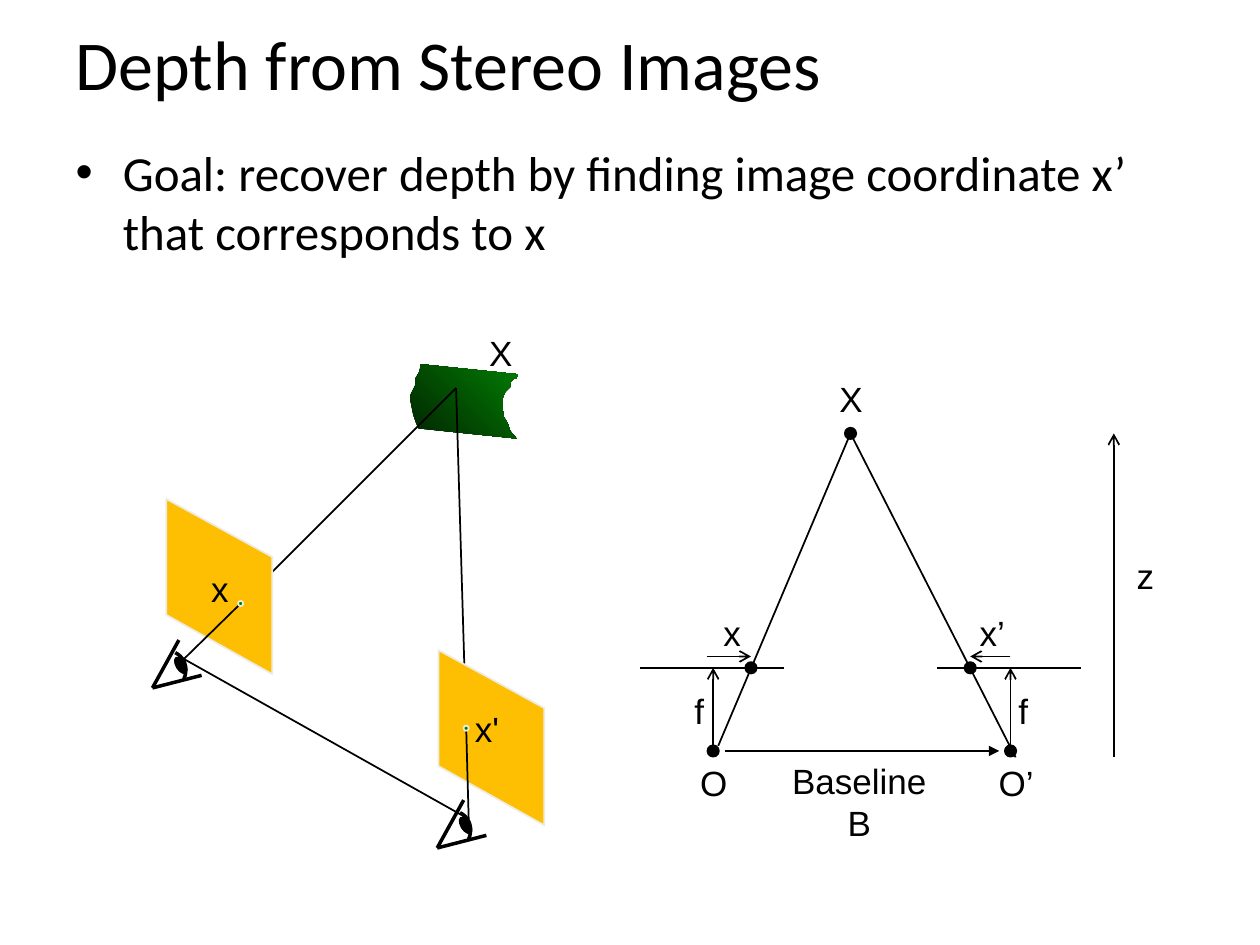
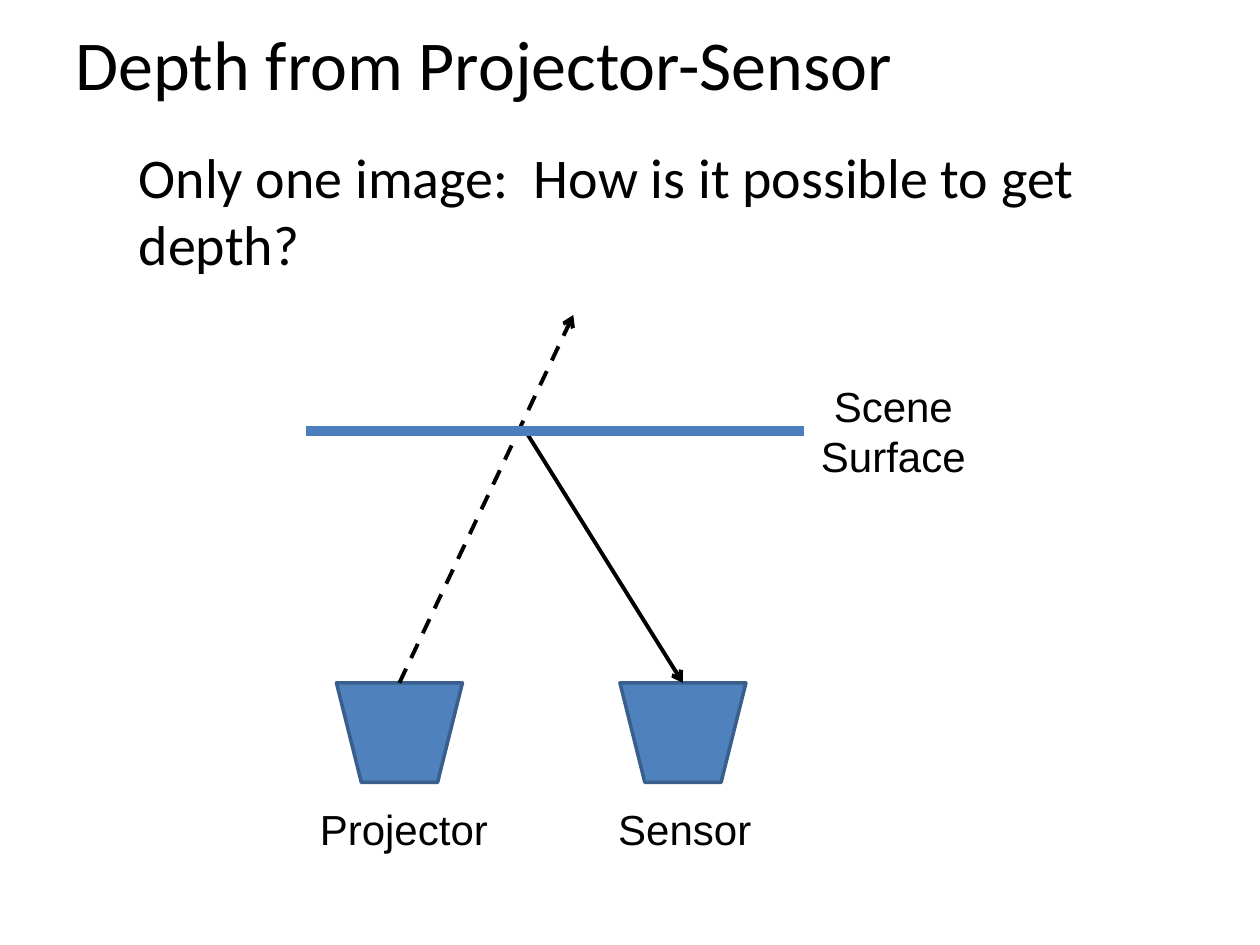
from lxml.etree import SubElement
from pptx import Presentation
from pptx.dml.color import RGBColor
from pptx.enum.dml import MSO_LINE
from pptx.enum.shapes import MSO_CONNECTOR, MSO_SHAPE
from pptx.enum.text import MSO_ANCHOR, MSO_AUTO_SIZE, PP_ALIGN
from pptx.oxml.ns import qn
from pptx.util import Inches, Pt

COLORS = {
    "ink": "000000",
    "image_plane": "FEBF02",
    "pale_edge": "EEECE1",
    "surface_dark": "012501",
    "surface_light": "037C03",
    "device": "4F81BD",
    "device_edge": "3A5F8C",
    "scene": "4B7EBC",
}
COLUMNS, ROWS = 10, 7.5
SURFACE_OUTLINE = [
    (3.34, 2.89), (3.33, 2.95), (3.3, 3), (3.3, 3.05), (3.26, 3.13), (3.26, 3.19),
    (3.28, 3.29), (3.3, 3.35), (3.32, 3.4), (4.1, 3.48), (4.05, 3.42), (4.03, 3.36),
    (4, 3.31), (3.99, 3.25), (3.99, 3.16), (4.01, 3.11), (4.05, 3.07), (4.05, 3.04),
    (4.07, 3.01), (4.1, 3), (4.11, 2.97),
]


def apply(target, values):
    """Set every attribute named in values on target."""
    for name, value in values.items():
        setattr(target, name, value)


def shifted(points, across, down):
    """Move a list of points by the same distance."""
    return [(x + across, y + down) for x, y in points]


def curve(controls, steps=10):
    """Sample a cubic curve given by four control points."""
    points = []
    for step in range(steps + 1):
        t = step / steps
        weights = [(1 - t) ** 3, 3 * t * (1 - t) ** 2, 3 * t * t * (1 - t), t ** 3]
        points.append(tuple(sum(w * c[axis] for w, c in zip(weights, controls)) for axis in (0, 1)))
    return points


class Sketch:
    """Draws styled elements on the current slide, measured in columns and rows."""

    def __init__(self, presentation):
        """Take the slide size and derive the grid cell."""
        self.presentation = presentation
        self.cell_width = presentation.slide_width / COLUMNS
        self.cell_height = presentation.slide_height / ROWS
        self.slide = None

    def point(self, column, row):
        """Convert a grid position to slide units."""
        return round(column * self.cell_width), round(row * self.cell_height)

    def place(self, left, top, width, height):
        """Convert a grid rectangle to slide units."""
        return (*self.point(left, top), *self.point(width, height))

    def color(self, name):
        """Look up a named colour."""
        return RGBColor.from_string(COLORS[name])

    def set_text(self, frame, text, size, font, align, bulleted=True):
        """Put one formatted paragraph in a text frame."""
        frame.text = text
        paragraph = frame.paragraphs[0]
        if not bulleted:
            properties = paragraph._p.get_or_add_pPr()
            properties.set("marL", "0")
            properties.set("indent", "0")
            SubElement(properties, qn("a:buNone"))
        apply(paragraph, {"alignment": align, "space_before": Pt(0)})
        apply(paragraph.font, {"size": Pt(size), "name": font})
        paragraph.font.color.rgb = self.color("ink")

    def new_slide(self, title, body, body_left, body_size, bulleted):
        """Start a slide with its title and body text."""
        self.slide = self.presentation.slides.add_slide(self.presentation.slide_layouts[1])
        title_shape, body_shape = self.slide.placeholders
        areas = ((title_shape, (0.5, 0, 9, 1)), (body_shape, (body_left, 1.08, 9.5 - body_left, 5.62)))
        for shape, area in areas:
            apply(shape, dict(zip(("left", "top", "width", "height"), self.place(*area))))
        self.set_text(title_shape.text_frame, title, 40, "Calibri", PP_ALIGN.LEFT)
        self.set_text(body_shape.text_frame, body, body_size, "Calibri", PP_ALIGN.LEFT, bulleted)

    def label(self, text, area, size=20, wrap=False, anchor=MSO_ANCHOR.MIDDLE):
        """Add a centred diagram label."""
        frame = self.slide.shapes.add_textbox(*self.place(*area)).text_frame
        self.set_text(frame, text, size, "Arial", PP_ALIGN.CENTER)
        apply(frame, {"word_wrap": wrap, "vertical_anchor": anchor,
                      "auto_size": MSO_AUTO_SIZE.SHAPE_TO_FIT_TEXT})

    def line(self, begin, end, width=1, arrow=None, color="ink", dash=None):
        """Add a straight line, with an arrowhead at its end if asked."""
        connector = self.slide.shapes.add_connector(
            MSO_CONNECTOR.STRAIGHT, *self.point(*begin), *self.point(*end))
        connector.line.color.rgb = self.color(color)
        apply(connector.line, {"width": Pt(width), "dash_style": dash})
        if arrow:
            SubElement(connector.line._get_or_add_ln(), qn("a:tailEnd"), type=arrow)
        SubElement(connector._element.spPr, qn("a:effectLst"))

    def finish(self, shape, fill, edge, width, rotation=0):
        """Set a shape's fill, outline and turn."""
        shape.shadow.inherit = False
        shape.rotation = rotation
        if fill:
            shape.fill.solid()
            shape.fill.fore_color.rgb = self.color(fill)
        else:
            shape.fill.background()
        if edge:
            shape.line.color.rgb = self.color(edge)
            shape.line.width = Pt(width)
        else:
            shape.line.fill.background()
        return shape

    def preset(self, kind, area, fill="ink", edge="ink", width=1, rotation=0):
        """Add a preset shape."""
        shape = self.slide.shapes.add_shape(kind, *self.place(*area))
        return self.finish(shape, fill, edge, width, rotation)

    def dot(self, center, size=0.09, fill="ink", edge="ink"):
        """Add a round point around its centre."""
        x, y = center
        self.preset(MSO_SHAPE.OVAL, (x - size / 2, y - size / 2, size, size), fill, edge)

    def outline(self, points, fill=None, edge=None, width=1, rotation=0, close=True):
        """Add a freeform through the points."""
        corners = [self.point(*corner) for corner in points]
        builder = self.slide.shapes.build_freeform(*corners[0])
        builder.add_line_segments(corners[1:], close=close)
        return self.finish(builder.convert_to_shape(), fill, edge, width, rotation)

    def surface(self):
        """Add the shaded patch of the scene."""
        fill = self.outline(SURFACE_OUTLINE).fill
        fill.gradient()
        fill.gradient_angle = 45
        for stop, name, position in zip(fill.gradient_stops, ("surface_dark", "surface_light"), (0, 1)):
            stop.color.rgb = self.color(name)
            stop.position = position

    def eye(self, x, y):
        """Add an eye whose lids meet at the given corner."""
        lid = curve([(0.16, -0.27), (0.24, -0.25), (0.29, -0.17), (0.27, -0.08)])
        self.outline(shifted(lid, x, y), edge="ink", width=2, rotation=12, close=False)
        for across, down in ((0.21, -0.38), (0.39, -0.1)):
            self.line((x, y), (x + across, y + down), width=2)
        self.preset(MSO_SHAPE.OVAL, (x + 0.19, y - 0.25, 0.07, 0.14), rotation=329)


def draw_scene_view(sketch):
    """Draw two eyes looking at one scene point through image planes."""
    plane = [(0, 0), (0.84, 0.46), (0.84, 1.39), (0, 0.92)]
    scene_point = (3.62, 3.08)
    views = [
        {"eye": (1.21, 5.46), "pupil": (1.46, 5.23), "plane": (1.32, 3.96), "hit": (1.91, 4.79)},
        {"eye": (3.47, 6.73), "pupil": (3.72, 6.5), "plane": (3.48, 5.16), "hit": (3.7, 5.78)},
    ]
    sketch.surface()
    sketch.line(views[0]["pupil"], views[1]["pupil"])
    for view in views:
        sketch.line(view["hit"], scene_point)
        sketch.outline(shifted(plane, *view["plane"]), "image_plane", "pale_edge")
        sketch.line(view["pupil"], view["hit"])
        sketch.eye(*view["eye"])
        sketch.dot(view["hit"], 0.04, "surface_light", "pale_edge")
    for text, left, top in (("X", 3.65, 2.58), ("x", 1.42, 4.45), ("x'", 3.54, 5.56)):
        sketch.label(text, (left, top, 0.65, 0.44), wrap=True)


def draw_plan_view(sketch):
    """Draw the stereo triangle with its focal lengths, baseline and depth."""
    apex, image_row, center_row = (6.75, 3.44), 5.3, 5.96
    cameras = [
        {"center": 5.66, "hit": 5.96, "plane": 5.08, "ray": (5.7, 5.92), "offset": 5.61,
         "f": 5.41, "x": ("x", 5.64, 0.34), "o": ("O", 5.22)},
        {"center": 8.02, "hit": 7.7, "plane": 7.44, "ray": (8.06, 6.01), "offset": 8.02,
         "f": 7.98, "x": ("x’", 7.67, 0.41), "o": ("O’", 7.62)},
    ]
    sketch.dot(apex)
    for camera in cameras:
        center, hit = camera["center"], camera["hit"]
        sketch.dot((center, center_row))
        sketch.dot((hit, image_row))
        sketch.line((camera["plane"], image_row), (camera["plane"] + 1.14, image_row))
        sketch.line(camera["ray"], apex)
        sketch.line((center, 5.92), (center, image_row), arrow="arrow")
        sketch.line((camera["offset"], 5.21), (hit, 5.21), arrow="arrow")
        sketch.label("f", (camera["f"], 5.42, 0.28, 0.44))
        text, left, width = camera["x"]
        sketch.label(text, (left, 4.8, width, 0.44))
        text, left = camera["o"]
        sketch.label(text, (left, 5.99, 0.89, 0.44), wrap=True)
    sketch.line((5.75, center_row), (7.93, center_row), width=1.5, arrow="triangle")
    sketch.line((8.84, 6.01), (8.84, apex[1]), arrow="arrow")
    sketch.label("Baseline\vB", (6.18, 5.98, 1.28, 0.77))
    sketch.label("z", (8.92, 4.35, 0.34, 0.44))
    sketch.label("X", (6.31, 2.94, 0.89, 0.44), wrap=True)


def draw_projector_sensor(sketch):
    """Draw a projector ray that a sensor sees reflected by the scene."""
    device_top, surface_row = 5.42, 3.42
    devices = (("Projector", 2.67, 2.43, 1.55), ("Sensor", 4.92, 4.8, 1.27))
    for name, left, label_left, label_width in devices:
        sketch.preset(MSO_SHAPE.TRAPEZOID, (left, device_top, 1, 0.79),
                      "device", "device_edge", 2, rotation=180)
        sketch.label(name, (label_left, 6.33, label_width, 0.5), 24, anchor=MSO_ANCHOR.TOP)
    sketch.line((3.17, device_top), (4.55, 2.5), 2.25, "arrow", dash=MSO_LINE.DASH)
    sketch.line((4.17, surface_row), (5.42, device_top), 2.25, "arrow")
    sketch.line((2.43, surface_row), (6.38, surface_row), 6, color="scene")
    sketch.label("Scene Surface", (6.09, 2.97, 2, 0.91), 24, wrap=True, anchor=MSO_ANCHOR.TOP)


def main():
    """Build both slides and save them."""
    presentation = Presentation()
    apply(presentation, {"slide_width": Inches(10), "slide_height": Inches(7.5)})
    sketch = Sketch(presentation)
    sketch.new_slide("Depth from Stereo Images",
                     "Goal: recover depth by finding image coordinate x’ that corresponds to x",
                     0.5, 28, bulleted=True)
    draw_plan_view(sketch)
    draw_scene_view(sketch)
    sketch.new_slide("Depth from Projector-Sensor",
                     "Only one image:  How is it possible to get depth?",
                     1, 32, bulleted=False)
    draw_projector_sensor(sketch)
    presentation.save("out.pptx")


if __name__ == "__main__":
    main()
